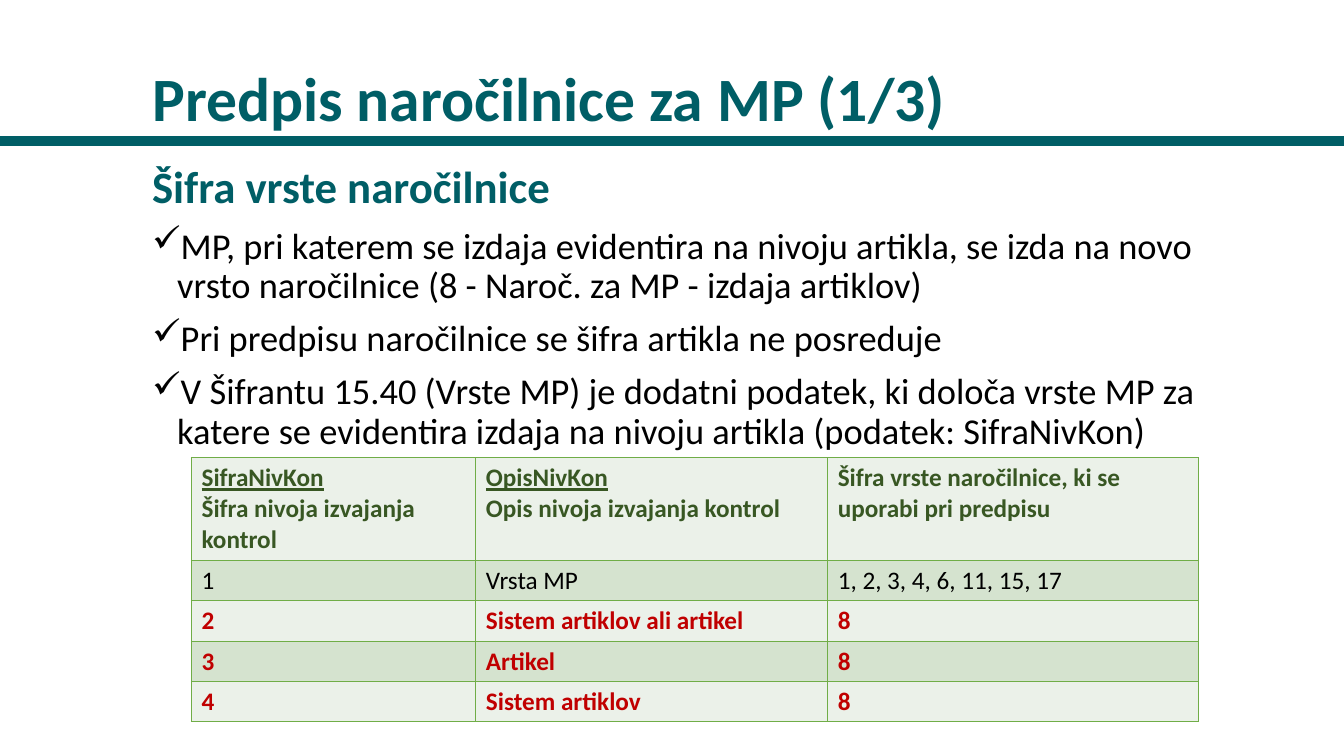
"""Build the slide on order-form type codes for medical devices."""
from lxml import etree
from pptx import Presentation
from pptx.dml.color import RGBColor
from pptx.enum import text
from pptx.oxml import ns
from pptx.util import Inches, Pt

COLORS = {"teal": "005E66", "black": "000000", "green": "385723", "red": "C00000",
          "border": "70AD47", "light": "EBF1E9", "dark": "D5E3CF"}


def add_span(para, words, size, color, bold=False, underline=False):
    span = para.add_run()
    span.text = words
    span.font.name = "Calibri"
    span.font.size = Pt(size)
    span.font.bold = bold
    span.font.underline = underline
    span.font.color.rgb = RGBColor.from_string(COLORS[color])


def add_element(parent, tag, **attributes):
    return etree.SubElement(parent, ns.qn(tag), attributes)


deck = Presentation()
deck.slide_width = Inches(13.33)
deck.slide_height = Inches(7.5)
page = deck.slides.add_slide(deck.slide_layouts[5])

rule = page.shapes.add_connector(1, 0, Inches(1.4), deck.slide_width, Inches(1.4))
rule.line.color.rgb = RGBColor.from_string(COLORS["teal"])
rule.line.width = Pt(7)
add_element(rule._element.spPr, "a:effectLst")

title = page.shapes.title
title.left, title.top = Inches(1.41), Inches(0.15)
title.width, title.height = Inches(11.01), Inches(1.24)
title.text_frame.vertical_anchor = text.MSO_ANCHOR.BOTTOM
title.text_frame.auto_size = text.MSO_AUTO_SIZE.NONE
para = title.text_frame.paragraphs[0]
para.alignment = text.PP_ALIGN.LEFT
para.line_spacing = 0.9
add_span(para, "Predpis naročilnice za MP (1/3)", 44, "teal", bold=True)

body = page.shapes.add_textbox(Inches(1.41), Inches(1.59), Inches(11.04), Inches(5.74))
body.text_frame.word_wrap = True
para = body.text_frame.paragraphs[0]
para.line_spacing = 0.9
add_span(para, "Šifra vrste naročilnice", 32, "teal", bold=True)

points = [
    "MP, pri katerem se izdaja evidentira na nivoju artikla, se izda na novo "
    "vrsto naročilnice (8 - Naroč. za MP - izdaja artiklov)",
    "Pri predpisu naročilnice se šifra artikla ne posreduje",
    "V Šifrantu 15.40 (Vrste MP) je dodatni podatek, ki določa vrste MP za "
    "katere se evidentira izdaja na nivoju artikla (podatek: SifraNivKon)",
]
for point in points:
    para = body.text_frame.add_paragraph()
    para.line_spacing = 0.9
    para.space_before = Pt(10)
    properties = para._p.get_or_add_pPr()
    properties.set("marL", str(Inches(0.25)))
    properties.set("indent", str(-Inches(0.25)))
    add_element(properties, "a:buChar", char="✓")
    add_span(para, point, 26, "black")

rows = [
    ["SifraNivKon\nŠifra nivoja izvajanja kontrol",
     "OpisNivKon\nOpis nivoja izvajanja kontrol",
     "Šifra vrste naročilnice, ki se uporabi pri predpisu"],
    ["1", "Vrsta MP", "1, 2, 3, 4, 6, 11, 15, 17"],
    ["2", "Sistem artiklov ali artikel", "8"],
    ["3", "Artikel", "8"],
    ["4", "Sistem artiklov", "8"],
]
row_colors = ["green", "black", "red", "red", "red"]
frame = page.shapes.add_table(len(rows), 3, Inches(1.9), Inches(4.54),
                              Inches(9.99), Inches(2.62))
table = frame.table
for column, width in zip(table.columns, [2.82, 3.49, 3.68]):
    column.width = Inches(width)
for r, row in enumerate(rows):
    table.rows[r].height = Inches(0.4 if r else 1.02)
    for c, words in enumerate(row):
        cell = table.cell(r, c)
        cell_properties = cell._tc.get_or_add_tcPr()
        for side in ["a:lnL", "a:lnR", "a:lnT", "a:lnB"]:
            edge = add_element(cell_properties, side, w=str(Pt(1)))
            fill = add_element(edge, "a:solidFill")
            add_element(fill, "a:srgbClr", val=COLORS["border"])
        cell.fill.solid()
        cell.fill.fore_color.rgb = RGBColor.from_string(COLORS["dark" if r % 2 else "light"])
        lines = words.split("\n")
        for i, line in enumerate(lines):
            para = cell.text_frame.add_paragraph() if i else cell.text_frame.paragraphs[0]
            add_span(para, line, 18, row_colors[r], bold=r != 1,
                     underline=len(lines) > 1 and i == 0)

deck.save("out.pptx")
